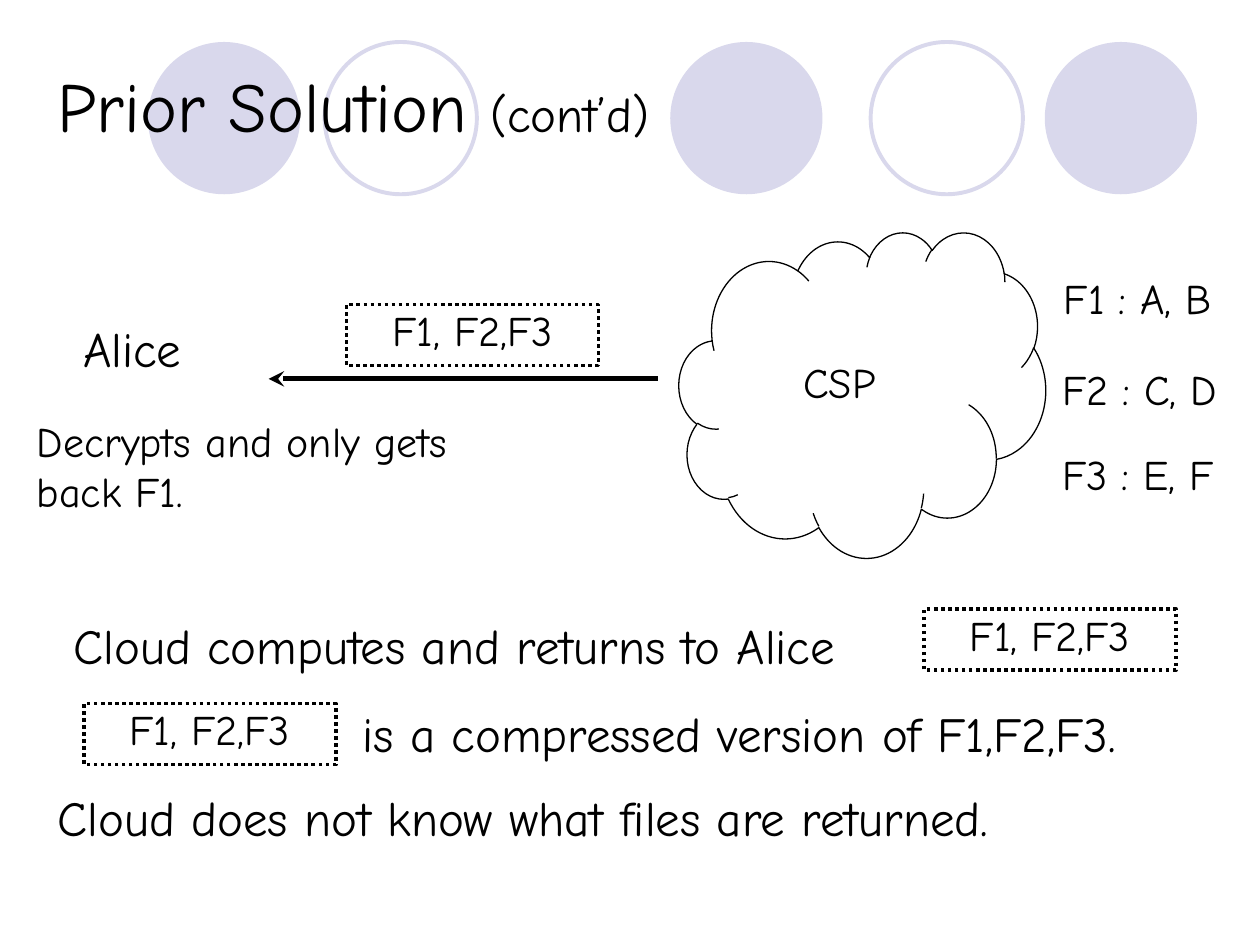
from dataclasses import dataclass

from pptx import Presentation
from pptx.dml.color import RGBColor
from pptx.enum import dml, shapes, text
from pptx.oxml.ns import qn
from pptx.util import Pt
from lxml import etree


@dataclass(frozen=True)
class Theme:
    font: str = "Comic Neue"
    ink: RGBColor = RGBColor(0x00, 0x00, 0x00)
    lavender: RGBColor = RGBColor(0xD9, 0xD8, 0xEC)
    title: int = 40
    body: int = 28
    label: int = 24


THEME = Theme()
FILES = "F1, F2,F3"


def write(frame, *runs, align=text.PP_ALIGN.LEFT, anchor=text.MSO_ANCHOR.TOP):
    """Fill a text frame with one paragraph of (wording, size) runs."""
    frame.word_wrap = True
    frame.vertical_anchor = anchor
    frame.margin_left = frame.margin_right = Pt(3)
    frame.margin_top = frame.margin_bottom = 0
    paragraph = frame.paragraphs[0]
    paragraph.alignment = align
    for wording, size in runs:
        run = paragraph.add_run()
        run.text = wording
        run.font.name = THEME.font
        run.font.size = Pt(size)
        run.font.color.rgb = THEME.ink


def add_text(slide, left, top, width, height, *runs, **layout):
    box = slide.shapes.add_textbox(Pt(left), Pt(top), Pt(width), Pt(height))
    write(box.text_frame, *runs, **layout)


def add_outline(slide, preset, left, top, width, height, color, weight):
    """Add an unfilled preset shape."""
    shape = slide.shapes.add_shape(preset, Pt(left), Pt(top), Pt(width), Pt(height))
    shape.shadow.inherit = False
    shape.fill.background()
    shape.line.color.rgb = color
    shape.line.width = Pt(weight)
    return shape


def add_circle(slide, left, filled):
    circle = add_outline(slide, shapes.MSO_SHAPE.OVAL, left, 24, 87, 87,
                         THEME.lavender, 2.25)
    if filled:
        circle.fill.solid()
        circle.fill.fore_color.rgb = THEME.lavender
        circle.line.fill.background()


def add_compressed_files(slide, left, top):
    packet = add_outline(slide, shapes.MSO_SHAPE.RECTANGLE, left, top, 144, 35,
                         THEME.ink, 2)
    packet.line.dash_style = dml.MSO_LINE.ROUND_DOT
    write(packet.text_frame, (FILES, THEME.label), align=text.PP_ALIGN.CENTER)


def add_arrow(slide, start_x, end_x, y):
    arrow = slide.shapes.add_connector(shapes.MSO_CONNECTOR.STRAIGHT,
                                       Pt(start_x), Pt(y), Pt(end_x), Pt(y))
    arrow.line.color.rgb = THEME.ink
    arrow.line.width = Pt(3)
    etree.SubElement(arrow.line._get_or_add_ln(), qn("a:tailEnd"), type="stealth")
    etree.SubElement(arrow._element.spPr, qn("a:effectLst"))


def main():
    deck = Presentation()
    deck.slide_width, deck.slide_height = Pt(720), Pt(540)
    slide = deck.slides.add_slide(deck.slide_layouts[6])

    for left, filled in ((84.5, True), (185.5, False), (383, True),
                         (497.5, False), (597, True)):
        add_circle(slide, left, filled)
    add_text(slide, 30, 0, 648, 119, ("Prior Solution ", THEME.title),
             ("(cont’d)", THEME.body), anchor=text.MSO_ANCHOR.MIDDLE)

    cloud = add_outline(slide, shapes.MSO_SHAPE.CLOUD, 388, 132.5, 209.5, 186,
                        THEME.ink, 0.75)
    cloud.text_frame.word_wrap = True

    for wording, size, left, top, width, height in (
        ("Alice", THEME.body, 44.5, 182, 75, 39),
        ("CSP", THEME.label, 456, 204, 55, 33),
        ("F1 : A, B", THEME.label, 605, 156, 105, 33),
        ("F2 : C, D", THEME.label, 604, 207.5, 105, 33),
        ("F3 : E, F", THEME.label, 604, 256.5, 105, 33),
        ("Decrypts and only gets back F1.", THEME.label, 18, 237.5, 242, 66),
        ("Cloud computes and returns to Alice", THEME.body, 39, 352, 485, 39),
        ("is a compressed version of F1,F2,F3.", THEME.body, 204, 402, 476, 39),
        ("Cloud does not know what files are returned.", THEME.body,
         30, 450, 634, 78),
    ):
        add_text(slide, left, top, width, height, (wording, size))

    add_arrow(slide, 376, 153.5, 216.5)
    for left, top in ((198, 174), (528, 348), (48, 402)):
        add_compressed_files(slide, left, top)

    deck.save("out.pptx")


if __name__ == "__main__":
    main()
